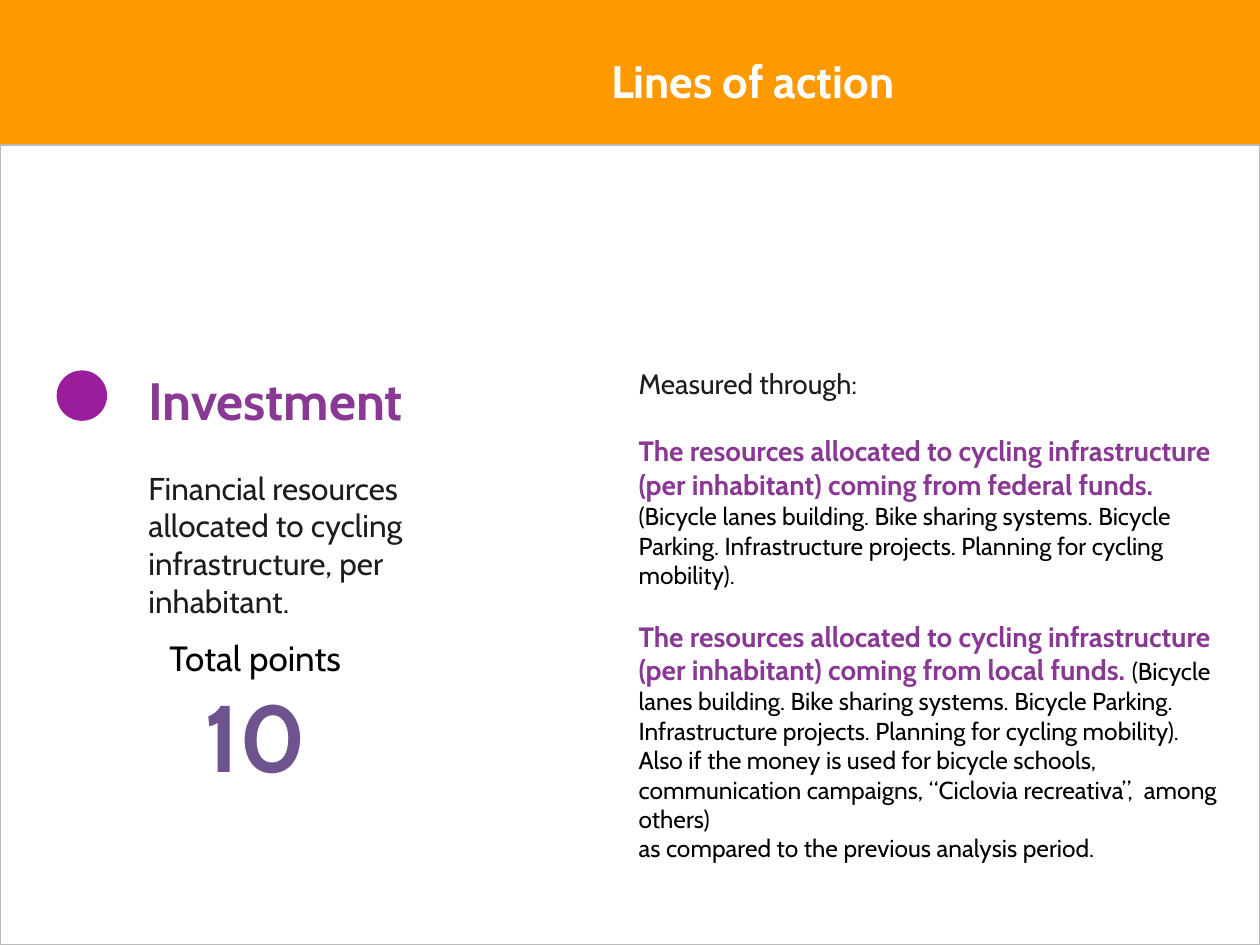
import pptx
import pptx.dml.color
import pptx.enum.shapes
import pptx.enum.text
import pptx.util

Pt = pptx.util.Pt
SHAPE = pptx.enum.shapes.MSO_SHAPE
ALIGN = pptx.enum.text.PP_ALIGN
AUTO_SIZE = pptx.enum.text.MSO_AUTO_SIZE


def rgb(value):
    return pptx.dml.color.RGBColor.from_string(value)


def apply(target, values):
    for name, value in values.items():
        setattr(target, name, value)


class Deck:
    font = "Cabin"
    orange = "FF9900"
    white = "FFFFFF"
    grey = "BABABA"
    ink = "1C1C1C"
    black = "000000"
    purple = "893993"
    violet = "6E538F"
    dot = "9A1E9B"

    def __init__(self, width, height):
        self.prs = pptx.Presentation()
        apply(self.prs, {"slide_width": Pt(width), "slide_height": Pt(height)})
        self.s = None

    def slide(self):
        self.s = self.prs.slides.add_slide(self.prs.slide_layouts[6])

    def shape(self, kind, box, fill, line=None):
        sp = self.s.shapes.add_shape(kind, *map(Pt, box))
        sp.shadow.inherit = False
        sp.fill.solid()
        sp.fill.fore_color.rgb = rgb(fill)
        if line:
            sp.line.color.rgb = rgb(line)
            sp.line.width = Pt(1)
        else:
            sp.line.fill.background()

    def text(self, box, paragraphs, inset=3.6, auto_size=AUTO_SIZE.NONE, **layout):
        tf = self.s.shapes.add_textbox(*map(Pt, box)).text_frame
        apply(tf, {
            "word_wrap": True,
            "auto_size": auto_size,
            "margin_left": Pt(7.2),
            "margin_right": Pt(7.2),
            "margin_top": Pt(inset),
            "margin_bottom": Pt(inset),
        })
        for i, (before, runs) in enumerate(paragraphs):
            p = tf.add_paragraph() if i else tf.paragraphs[0]
            apply(p, {"space_before": Pt(before), **layout})
            for words, size, color, bold in runs:
                r = p.add_run()
                r.text = words
                apply(r.font, {"name": self.font, "size": Pt(size), "bold": bold})
                r.font.color.rgb = rgb(color)

    def save(self):
        self.prs.save("out.pptx")


def main():
    d = Deck(720, 540)
    d.slide()
    d.shape(SHAPE.RECTANGLE, (0, -2.16, 720, 542.16), d.orange)
    d.shape(SHAPE.RECTANGLE, (0, 82.8, 720, 457.2), d.white, d.grey)

    d.text((77.76, 264.24, 203, 193), [
        (0, [("Financial resources allocated to cycling infrastructure, per inhabitant.",
              18, d.ink, False)]),
    ])
    d.text((77.76, 195.84, 212.4, 89.3), [(0, [("Investment", 30, d.purple, True)])],
           inset=7.2, line_spacing=1.2)
    d.text((140.4, 26.64, 579.6, 38.9), [(0, [("Lines of action", 26, d.white, True)])],
           alignment=ALIGN.CENTER)

    resources = "The resources allocated to cycling infrastructure (per inhabitant) coming from {} funds. "
    examples = ("(Bicycle lanes building. Bike sharing systems. Bicycle Parking. "
                "Infrastructure projects. Planning for cycling mobility).")
    others = (" Also if the money is used for bicycle schools, communication campaigns, "
              "“Ciclovia recreativa”,  among others)")
    d.text((357.84, 205.92, 345.6, 295.2), [
        (0, [("Measured through:", 16, d.ink, False)]),
        (19.4, [(resources.format("federal"), 16, d.purple, True),
                (examples, 14, d.black, False)]),
        (17, [(resources.format("local"), 16, d.purple, True),
              (examples + others, 14, d.black, False)]),
        (0, [("as compared to the previous analysis period.", 14, d.black, False)]),
    ], auto_size=AUTO_SIZE.SHAPE_TO_FIT_TEXT)

    d.shape(SHAPE.OVAL, (32.4, 211.68, 28.8, 28.8), d.dot)
    d.text((64.08, 360, 163.44, 97.2), [
        (0, [("Total points", 20, d.black, False)]),
        (0, [("10", 54, d.violet, True)]),
    ], alignment=ALIGN.CENTER)
    d.save()


if __name__ == "__main__":
    main()
